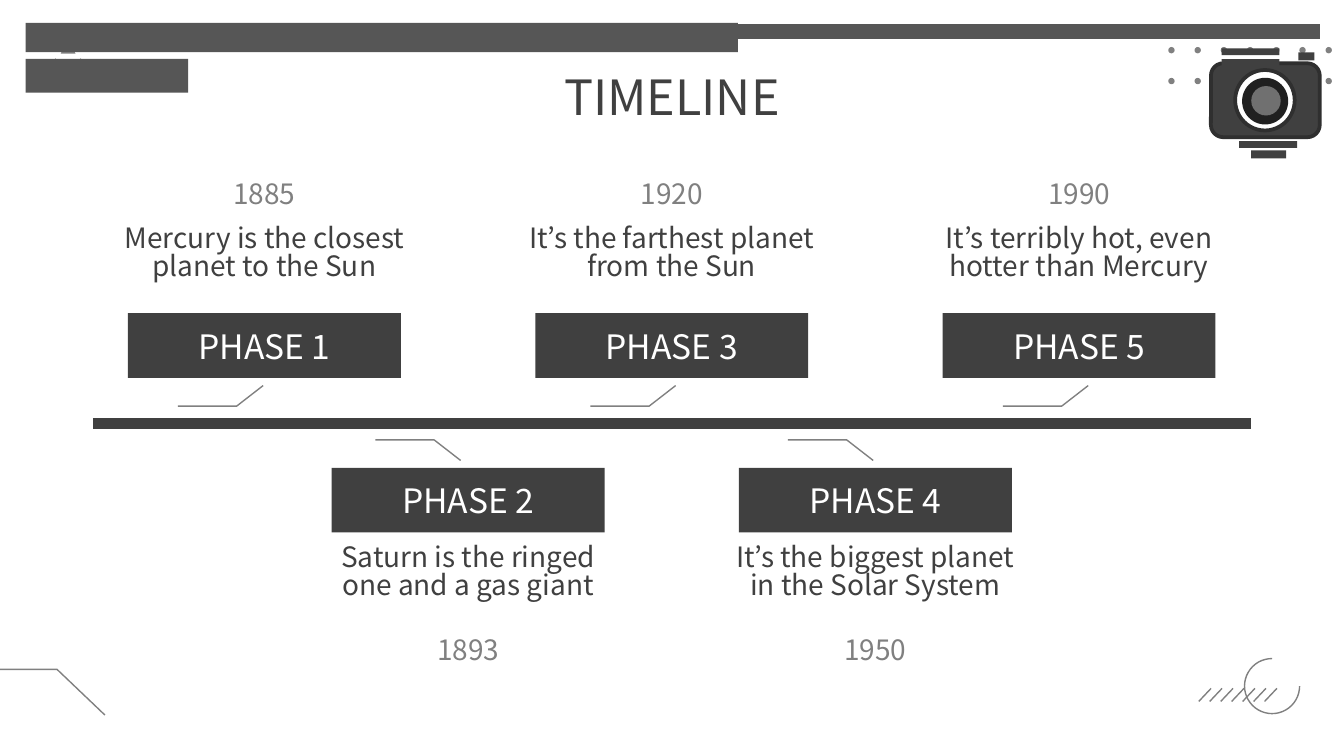
from lxml import etree
from pptx import Presentation
from pptx.dml.color import RGBColor
from pptx.enum.shapes import MSO_CONNECTOR as Conn, MSO_SHAPE as Geo
from pptx.enum.text import MSO_ANCHOR as Anchor, PP_ALIGN as Align
from pptx.oxml.ns import qn
from pptx.util import Pt

FONT = "Noto Sans CJK KR"
DARK, GREY, BAR, WHITE = "404040", "808080", "565656", "FFFFFF"
STEPS = [
    ("1885", "PHASE 1", "Mercury is the closest planet to the Sun"),
    ("1893", "PHASE 2", "Saturn is the ringed one and a gas giant"),
    ("1920", "PHASE 3", "It’s the farthest planet from the Sun"),
    ("1950", "PHASE 4", "It’s the biggest planet in the Solar System"),
    ("1990", "PHASE 5", "It’s terribly hot, even hotter than Mercury"),
]


def tint(color, code):
    """Set a colour format from a hex string."""
    color.rgb = RGBColor.from_string(code)


def style(shape, fill=None, line=None, width=0.75):
    """Give a shape its fill and outline, without shadow."""
    shape.shadow.inherit = False
    for part, code in ((shape.fill, fill), (shape.line.fill, line)):
        if code:
            part.solid()
            tint(part.fore_color, code)
        else:
            part.background()
    if line:
        shape.line.width = Pt(width)


def block(slide, geo, x, y, w, h, fill=None, line=None, width=0.75):
    """Add a preset shape."""
    shape = slide.shapes.add_shape(geo, Pt(x), Pt(y), Pt(w), Pt(h))
    style(shape, fill, line, width)
    return shape


def trace(slide, points, fill=None, line=None):
    """Add an outline through the points, closed when filled."""
    spots = [(Pt(x), Pt(y)) for x, y in points]
    pen = slide.shapes.build_freeform(*spots[0])
    pen.add_line_segments(spots[1:], close=fill is not None)
    style(pen.convert_to_shape(), fill, line)


def stroke(slide, x1, y1, x2, y2, code, width):
    """Add a straight line."""
    line = slide.shapes.add_connector(Conn.STRAIGHT, Pt(x1), Pt(y1), Pt(x2), Pt(y2))
    tint(line.line.color, code)
    line.line.width = Pt(width)
    etree.SubElement(line._element.spPr, qn("a:effectLst"))


def write(shape, text, size, code, anchor=Anchor.MIDDLE, lead=None):
    """Put one centred run of text into a shape."""
    frame = shape.text_frame
    frame.word_wrap = True
    frame.vertical_anchor = anchor
    frame.margin_left = frame.margin_right = Pt(7.2)
    frame.margin_top = frame.margin_bottom = Pt(7.2)
    para = frame.paragraphs[0]
    para.alignment = Align.CENTER
    if lead:
        para.line_spacing = lead
    run = para.add_run()
    run.text = text
    run.font.name = FONT
    run.font.size = Pt(size)
    tint(run.font.color, code)


def label(slide, x, y, w, h, *args):
    """Add a text box."""
    write(slide.shapes.add_textbox(Pt(x), Pt(y), Pt(w), Pt(h)), *args)


def bend(slide, x, y, w, h, down):
    """Draw a flat line whose right end slopes down or up."""
    flat, tip = (y, y + h) if down else (y + h, y)
    trace(slide, [(x + w, tip), (x + 0.69 * w, flat), (x, flat)], line=GREY)


def badge(slide, x, y, r=3.6, far=10.1, half=4):
    """Draw the three arrowheads that peek out behind the bars."""
    for dx, dy in ((-1, 0), (1, 0), (0, -1)):
        tip = (x + dx * (far + r), y + dy * (far + r))
        base = [(x + dx * (far - r) + s * dy * half, y + dy * (far - r) + s * dx * half)
                for s in (-1, 1)]
        trace(slide, [tip, *base], fill=GREY)


def dots(slide, x, y):
    """Draw the dot grid behind the camera."""
    for row, cols in enumerate((range(7), (0, 1, 6))):
        for col in cols:
            block(slide, Geo.OVAL, x + 14.04 * col, y + 16.56 * row, 3.4, 3.4, GREY)


def swirl(slide, x, y):
    """Draw the hatching and the open ring."""
    ring = block(slide, Geo.ARC, x + 24.5, y, 29.5, 29.5, line=GREY)
    ring.adjustments[0] = 0
    ring.adjustments[1] = 162
    for i in range(7):
        left = x + 5.88 * i
        stroke(slide, left, y + 23, left + 6.6, y + 16, GREY, 0.75)


def camera(slide, x, y):
    """Draw the camera from plain shapes."""
    block(slide, Geo.ROUNDED_RECTANGLE, x, y + 8, 58.3, 39.6, DARK, "2F2F2F", 2)
    block(slide, Geo.OVAL, x + 13, y + 11.6, 31.9, 32.4, WHITE, "2F2F2F", 2)
    block(slide, Geo.OVAL, x + 16.7, y + 15.8, 24.7, 25, "202020")
    block(slide, Geo.OVAL, x + 21.6, y + 20.2, 15.8, 15.8, "707070")
    for dx, dy, w, h in ((46.8, 2.2, 8.6, 4.3), (5.8, 5.8, 31, 3.6), (5.8, 0, 31, 3.6),
                         (15.2, 49.7, 31, 3.6), (21.6, 54.7, 18.7, 4.3)):
        block(slide, Geo.RECTANGLE, x + dx, y + dy, w, h, DARK)


def header(slide, x, y):
    """Draw the top bars, the camera and the title."""
    block(slide, Geo.RECTANGLE, x + 311.8, y + 0.7, 381.6, 7.9, BAR)
    camera(slide, x + 635, y + 13.7)
    block(slide, Geo.RECTANGLE, x, y, 381.6, 15.8, BAR)
    block(slide, Geo.RECTANGLE, x, y + 19.4, 87.1, 18, BAR)
    label(slide, x + 46.1, y + 16.6, 600.5, 45.4, "TIMELINE", 26, DARK)


def phase(slide, mid, axis, step, low):
    """Place one phase above or below the axis."""
    year, name, text = step
    box, note, date = (23.8, 58.3, 110.9) if low else (-59, -113, -133.2)
    card = block(slide, Geo.RECTANGLE, mid - 73.1, axis + box, 146.2, 34.6, DARK)
    write(card, name, 18, WHITE)
    label(slide, mid - 86.8, axis + note, 173.5, 46.8, text, 15, DARK, Anchor.TOP, 0.83)
    label(slide, mid - 40.7, axis + date, 81.4, 20.2, year, 15, GREY)


def timeline(slide, x, y, w):
    """Draw the axis, its phases and their ticks."""
    stroke(slide, x, y, x + w, y, DARK, 6)
    for i, step in enumerate(STEPS):
        low = i % 2 == 1
        phase(slide, x + 92 + 109.1 * i, y, step, low)
        tick = x + 45.6 + 110.5 * i - (4.7 if low else 0)
        bend(slide, tick, y + (8.9 if low else -20.2), 45.7, 11, low)


def main():
    """Build the slide and save it."""
    deck = Presentation()
    deck.slide_width, deck.slide_height = Pt(720), Pt(405)
    slide = deck.slides.add_slide(deck.slide_layouts[6])
    badge(slide, 36.5, 35.3)
    bend(slide, -26.6, 358.6, 82.8, 24.5, True)
    dots(slide, 625.9, 25.2)
    swirl(slide, 642.2, 352.8)
    header(slide, 13.7, 12.2)
    timeline(slide, 49.7, 226.8, 620.6)
    deck.save("out.pptx")


if __name__ == "__main__":
    main()
